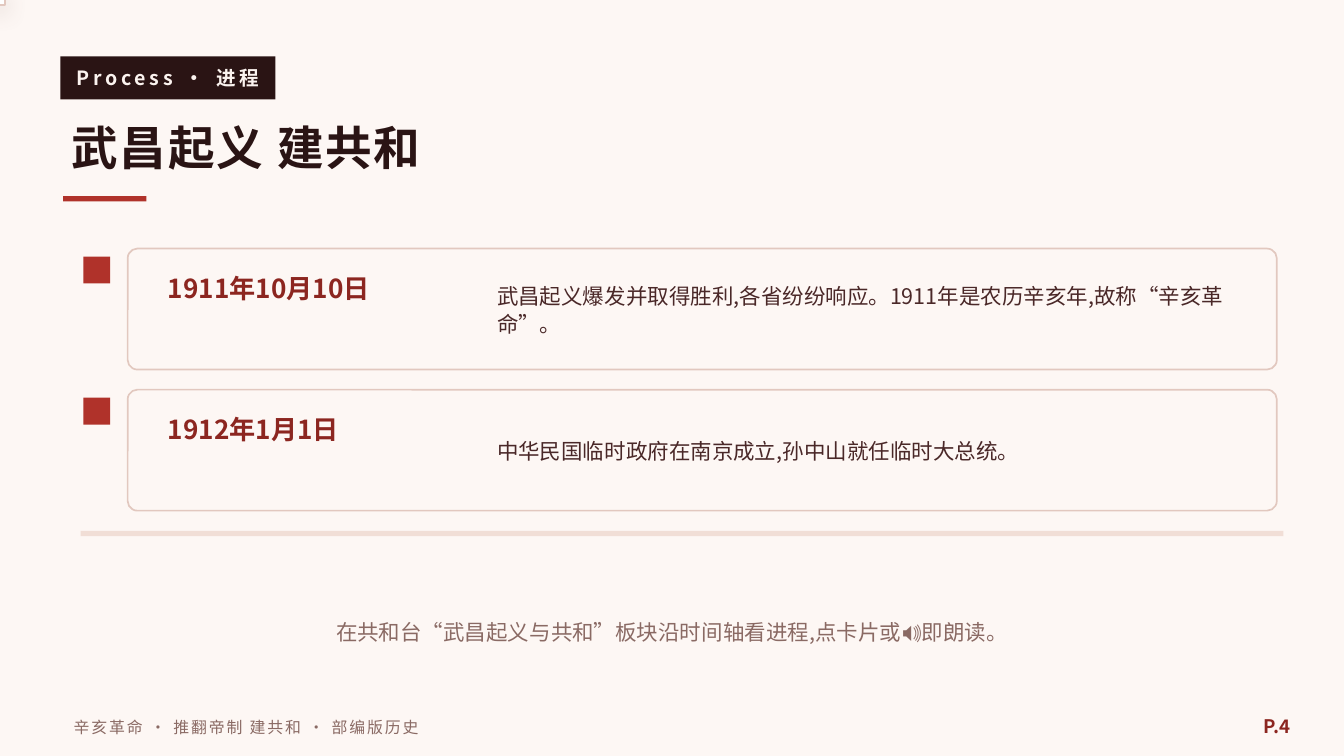
from lxml import etree
from pptx import Presentation
from pptx.dml.color import RGBColor
from pptx.enum.shapes import MSO_SHAPE
from pptx.enum.text import MSO_ANCHOR, MSO_AUTO_SIZE, PP_ALIGN
from pptx.oxml.ns import qn
from pptx.util import Inches, Pt

RECT, ROUND = MSO_SHAPE.RECTANGLE, MSO_SHAPE.ROUNDED_RECTANGLE
LEFT, CENTER, RIGHT = PP_ALIGN.LEFT, PP_ALIGN.CENTER, PP_ALIGN.RIGHT
MIDDLE, NO_FIT = MSO_ANCHOR.MIDDLE, MSO_AUTO_SIZE.NONE

FONT = "Noto Sans CJK SC"
WIDTH, HEIGHT = 10, 5.625
FIRST_ROW, ROW_STEP = 1.85, 1.05
COLORS = {
    "paper": "FDF7F4", "ink": "2A1414", "tag": "FBF3EF", "red": "B0322A",
    "date": "8C2620", "body": "4A2828", "muted": "8A6A64", "border": "E2C8BF",
    "rule": "F1DED6", "white": "FFFFFF",
}
STYLES = {
    "tag": {"size": Pt(10.5), "bold": True},
    "title": {"size": Pt(25), "bold": True},
    "date": {"size": Pt(14), "bold": True},
    "body": {"size": Pt(11.5), "bold": False},
    "footer": {"size": Pt(8.5), "bold": False},
    "page": {"size": Pt(10), "bold": True},
}
EVENTS = [
    ("1911年10月10日", "武昌起义爆发并取得胜利,各省纷纷响应。1911年是农历辛亥年,故称“辛亥革命”。"),
    ("1912年1月1日", "中华民国临时政府在南京成立,孙中山就任临时大总统。"),
]


def rgb(name):
    """Return the named colour."""
    return RGBColor.from_string(COLORS[name])


def add_block(s, box, fill, kind=RECT, line=None, weight=1):
    """Add a filled shape, outlined only when a line colour is given."""
    sp = s.shapes.add_shape(kind, *map(Inches, box))
    sp.shadow.inherit = False
    sp.fill.solid()
    sp.fill.fore_color.rgb = rgb(fill)
    if line:
        sp.line.color.rgb = rgb(line)
        sp.line.width = Pt(weight)
    else:
        sp.line.fill.background()
    return sp


def write(sp, text, style, color, align=LEFT, spacing=0, leading=None):
    """Write one formatted paragraph into a shape."""
    tf = sp.text_frame
    for name, value in {"word_wrap": True, "auto_size": NO_FIT, "vertical_anchor": MIDDLE}.items():
        setattr(tf, name, value)
    p = tf.paragraphs[0]
    p.alignment = align
    if leading:
        p.line_spacing = Pt(leading)
    r = p.add_run()
    r.text = text
    for name, value in STYLES[style].items():
        setattr(r.font, name, value)
    r.font.color.rgb = rgb(color)
    r.font.name = FONT
    props = r.font._element
    etree.SubElement(props, qn("a:ea"), typeface=FONT)
    if spacing:
        props.set("spc", str(spacing * 100))


def add_text(s, box, *args, **options):
    """Add a text box with one formatted paragraph."""
    write(s.shapes.add_textbox(*map(Inches, box)), *args, **options)


def add_title(s, box, text):
    """Place and fill the title placeholder."""
    sp = s.shapes.title
    sp.left, sp.top, sp.width, sp.height = map(Inches, box)
    write(sp, text, "title", "ink", spacing=1)


def add_event(s, top, date, text):
    """Add a timeline marker with its card, date and description."""
    add_block(s, (0.62, top + 0.06, 0.2, 0.2), "red")
    card = add_block(s, (0.95, top, 8.55, 0.9), "paper", ROUND, "border", 0.9)
    card.adjustments[0] = 0.08
    add_text(s, (1.15, top + 0.12, 2.4, 0.34), date, "date", "date")
    add_text(s, (3.6, top + 0.1, 5.7, 0.7), text, "body", "body", leading=15)


def add_corner(s):
    """Add the small square at the slide corner with its soft shadow."""
    sp = add_block(s, (-0.04, -0.04, 0.08, 0.08), "white", line="border")
    effects = sp._element.spPr.find(qn("a:effectLst"))
    shadow = etree.SubElement(effects, qn("a:outerShdw"), blurRad=str(Pt(12)),
                              dist=str(Pt(3)), dir="5400000", rotWithShape="0")
    color = etree.SubElement(shadow, qn("a:srgbClr"), val=COLORS["muted"])
    etree.SubElement(color, qn("a:alpha"), val="30000")


def main():
    """Build and save the slide."""
    prs = Presentation()
    prs.slide_width, prs.slide_height = Inches(WIDTH), Inches(HEIGHT)
    s = prs.slides.add_slide(prs.slide_layouts[5])
    s.background.fill.solid()
    s.background.fill.fore_color.rgb = rgb("paper")

    add_block(s, (0.45, 0.42, 1.6, 0.32), "ink")
    add_text(s, (0.45, 0.41, 1.6, 0.34), "Process · 进程", "tag", "tag", CENTER, 2)
    add_title(s, (0.43, 0.78, 9, 0.62), "武昌起义 建共和")
    add_block(s, (0.47, 1.46, 0.62, 0.04), "red")
    for i, event in enumerate(EVENTS):
        add_event(s, FIRST_ROW + i * ROW_STEP, *event)
    add_block(s, (0.6, 3.95, 8.95, 0.04), "rule")
    add_corner(s)
    add_text(s, (0.5, 4.5, 9, 0.4), "在共和台“武昌起义与共和”板块沿时间轴看进程,点卡片或🔊即朗读。",
             "body", "muted", CENTER)
    add_text(s, (0.45, 5.26, 6.5, 0.3), "辛亥革命 · 推翻帝制 建共和 · 部编版历史",
             "footer", "muted", spacing=1)
    add_text(s, (9.1, 5.24, 0.6, 0.32), "P.4", "page", "date", RIGHT)
    prs.save("out.pptx")


if __name__ == "__main__":
    main()
